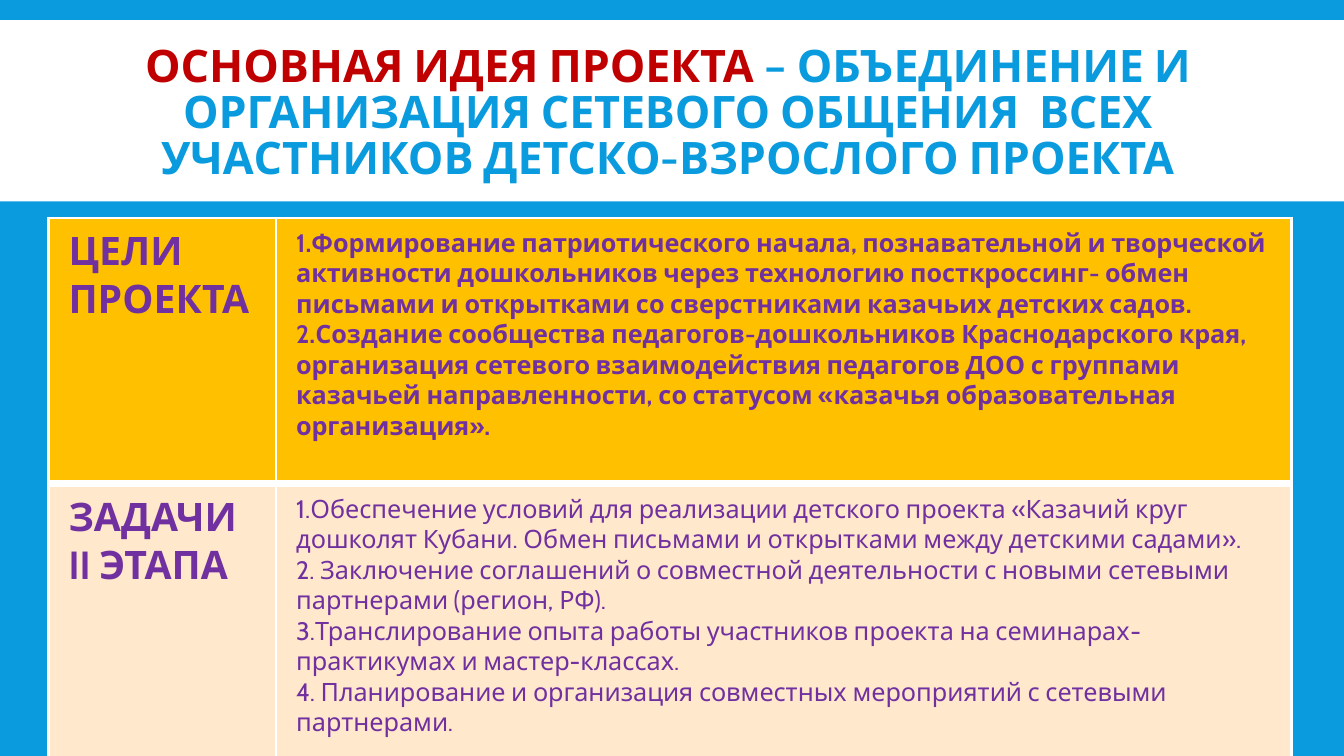
from lxml import etree
from pptx import Presentation
from pptx.dml.color import RGBColor
from pptx.enum.shapes import MSO_SHAPE
from pptx.enum.text import MSO_ANCHOR, PP_ALIGN
from pptx.oxml.ns import qn
from pptx.util import Inches, Pt

RECTANGLE = MSO_SHAPE.RECTANGLE
MIDDLE = MSO_ANCHOR.MIDDLE
CENTER = PP_ALIGN.CENTER

FONT = "Cabin"
BLUE, RED, PURPLE, WHITE = "099BDD", "C00000", "7030A0", "FFFFFF"
WIDTH, HEIGHT = 6.67, 3.75

HEADING = [
    ("ОСНОВНАЯ ИДЕЯ ПРОЕКТА ", RED),
    ("– ОБЪЕДИНЕНИЕ И ОРГАНИЗАЦИЯ СЕТЕВОГО ОБЩЕНИЯ  ВСЕХ УЧАСТНИКОВ "
     "ДЕТСКО-ВЗРОСЛОГО ПРОЕКТА", BLUE),
]
SECTIONS = [
    {
        "labels": ["ЦЕЛИ ПРОЕКТА"],
        "points": [
            "1.Формирование патриотического начала, познавательной и творческой "
            "активности дошкольников через технологию посткроссинг- обмен письмами "
            "и открытками со сверстниками казачьих детских садов.",
            "2.Создание сообщества педагогов-дошкольников Краснодарского края, "
            "организация сетевого взаимодействия педагогов ДОО с группами казачьей "
            "направленности, со статусом «казачья образовательная организация».",
        ],
        "bold": True, "fill": "FFC000", "height": 1.32,
        "borders": {"L": 1, "R": 1, "T": 1, "B": 3},
    },
    {
        "labels": ["ЗАДАЧИ", "II ЭТАПА"],
        "points": [
            "1.Обеспечение условий для реализации детского проекта «Казачий круг "
            "дошколят Кубани. Обмен письмами и открытками между детскими садами».",
            "2. Заключение соглашений о совместной деятельности с новыми сетевыми "
            "партнерами (регион, РФ).",
            "3.Транслирование опыта работы участников проекта на "
            "семинарах-практикумах и мастер-классах.",
            "4. Планирование и организация совместных мероприятий с сетевыми "
            "партнерами.",
        ],
        "bold": False, "fill": "FFE8CC", "height": 1.37,
        "borders": {"L": 1, "R": 1, "T": 3, "B": 1},
    },
]


def color(value):
    return RGBColor.from_string(value)


def paint(fill, value):
    fill.solid()
    fill.fore_color.rgb = color(value)


def apply_format(target, values):
    for name, value in values.items():
        setattr(target, name, value)


def add_run(paragraph, text, size, text_color, bold):
    run = paragraph.add_run()
    run.text = text
    apply_format(run.font, {"name": FONT, "size": Pt(size), "bold": bold})
    run.font.color.rgb = color(text_color)


def add_borders(cell, widths):
    properties = cell._tc.get_or_add_tcPr()
    for side, width in widths.items():
        border = etree.SubElement(properties, qn(f"a:ln{side}"), w=str(Pt(width)))
        fill = etree.SubElement(border, qn("a:solidFill"))
        etree.SubElement(fill, qn("a:srgbClr"), val=WHITE)


def fill_cell(cell, lines, size, bold, section):
    add_borders(cell, section["borders"])
    paint(cell.fill, section["fill"])
    frame = cell.text_frame
    for index, line in enumerate(lines):
        paragraph = frame.add_paragraph() if index else frame.paragraphs[0]
        add_run(paragraph, line, size, PURPLE, bold)


def add_heading(slide, left, top, width, height):
    band = slide.shapes.add_shape(
        RECTANGLE, Inches(left), Inches(top), Inches(width), Inches(height))
    band.shadow.inherit = False
    paint(band.fill, WHITE)
    band.line.fill.background()

    heading = slide.shapes.add_textbox(
        Inches(left + 0.07), Inches(top + 0.06),
        Inches(width - 0.18), Inches(height - 0.08))
    apply_format(heading.text_frame, {
        "word_wrap": True, "vertical_anchor": MIDDLE,
        "margin_left": Inches(0.05), "margin_right": Inches(0.05),
        "margin_top": Inches(0.02), "margin_bottom": Inches(0.02),
    })
    paragraph = heading.text_frame.paragraphs[0]
    apply_format(paragraph, {"alignment": CENTER, "line_spacing": 0.85})
    for text, text_color in HEADING:
        add_run(paragraph, text, 16, text_color, True)


def add_plan(slide, left, top, width, label_width):
    total = sum(section["height"] for section in SECTIONS)
    plan = slide.shapes.add_table(
        len(SECTIONS), 2, Inches(left), Inches(top),
        Inches(width), Inches(total)).table
    plan.columns[0].width = Inches(label_width)
    plan.columns[1].width = Inches(width - label_width)
    for row, section in zip(plan.rows, SECTIONS):
        row.height = Inches(section["height"])
        fill_cell(row.cells[0], section["labels"], 14, True, section)
        fill_cell(row.cells[1], section["points"], 9, section["bold"], section)


def main():
    deck = Presentation()
    deck.slide_width, deck.slide_height = Inches(WIDTH), Inches(HEIGHT)
    slide = deck.slides.add_slide(deck.slide_layouts[6])
    paint(slide.background.fill, BLUE)
    add_heading(slide, 0, 0.1, WIDTH, 0.9)
    add_plan(slide, 0.24, 1.08, 6.17, 1.13)
    deck.save("out.pptx")


if __name__ == "__main__":
    main()
